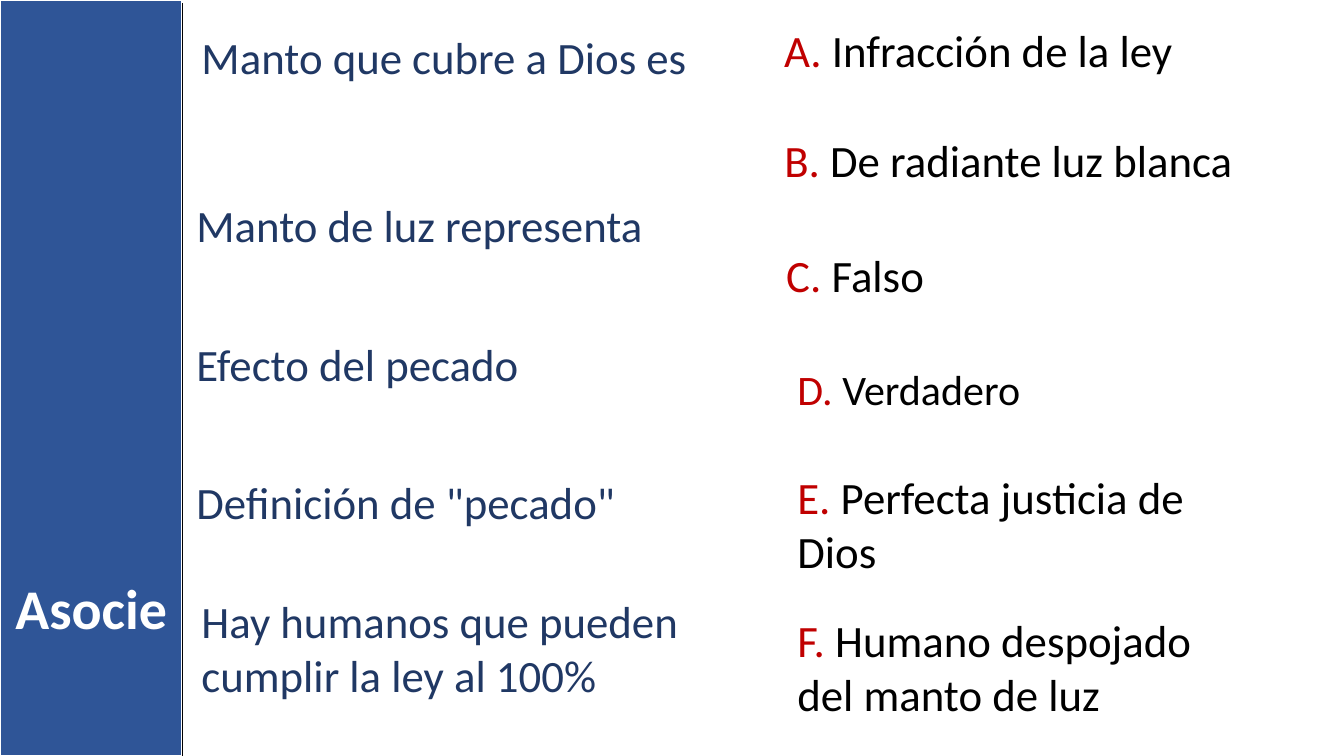
from lxml import etree
from pptx import Presentation
from pptx.dml.color import RGBColor
from pptx.enum.shapes import MSO_CONNECTOR, MSO_SHAPE
from pptx.enum.text import MSO_ANCHOR, MSO_AUTO_SIZE, PP_ALIGN
from pptx.oxml.ns import qn
from pptx.util import Inches, Pt

RECT = MSO_SHAPE.RECTANGLE
STRAIGHT = MSO_CONNECTOR.STRAIGHT
TOP = MSO_ANCHOR.TOP
NO_FIT = MSO_AUTO_SIZE.NONE
CENTER = PP_ALIGN.CENTER

FONT = "Calibri"
COLORS = {
    "bar": "2F5597",
    "prompt": "203864",
    "letter": "C00000",
    "answer": "000000",
    "divider": "000000",
    "white": "FFFFFF",
}
SLIDE_W, SLIDE_H = 13.33, 7.5
BAR_W = 1.81

# Text, offset from the column's left edge, top, width, height
PROMPTS = [
    ("Manto que cubre a Dios es", 0.05, 0.25, 5.39, 0.64),
    ("Manto de luz representa", 0, 1.91, 5.16, 0.64),
    ("Efecto del pecado", 0, 3.29, 5.1, 0.64),
    ("Definición de \"pecado\"", 0, 4.66, 4.94, 0.64),
    ("Hay humanos que pueden cumplir la ley al 100%", 0.05, 5.84, 5.16, 1.18),
]
# Text, offset from the column's left edge, top, width, height, size
ANSWERS = [
    ("Infracción de la ley", 0, 0.18, 5, 0.64, 32),
    ("De radiante luz blanca", 0, 1.27, 4.68, 0.64, 32),
    ("Falso", 0.02, 2.41, 4.73, 0.64, 32),
    ("Verdadero", 0.13, 3.56, 4.75, 0.61, 30),
    ("Perfecta justicia de Dios", 0.13, 4.61, 4.91, 1.18, 32),
    ("Humano despojado del manto de luz", 0.13, 6.03, 4.62, 1.18, 32),
]


def rgb(name):
    return RGBColor.from_string(COLORS[name])


def format_run(r, size, color, bold=False):
    r.font.name = FONT
    r.font.size = Pt(size)
    r.font.bold = bold
    r.font.color.rgb = rgb(color)


def add_text(s, left, top, width, height, parts, size):
    """Add a wrapped text box; parts is a list of (text, color name)."""
    box = s.shapes.add_textbox(*map(Inches, (left, top, width, height)))
    tf = box.text_frame
    tf.word_wrap = True
    p = tf.paragraphs[0]
    for text, color in parts:
        r = p.add_run()
        r.text = text
        format_run(r, size, color)


def add_sidebar(s, left, top, width, height):
    bar = s.shapes.add_shape(RECT, *map(Inches, (left, top, width, height)))
    bar.shadow.inherit = False
    bar.fill.solid()
    bar.fill.fore_color.rgb = rgb("bar")
    bar.line.color.rgb = rgb("white")
    bar.line.width = Pt(1.5)

    title = s.shapes.title
    title.left, title.top = Inches(left), Inches(top + 5.64)
    title.width, title.height = Inches(width), Inches(0.77)
    tf = title.text_frame
    tf.text = "Asocie"
    tf.word_wrap = True
    tf.auto_size = NO_FIT
    tf.vertical_anchor = TOP
    p = tf.paragraphs[0]
    p.alignment = CENTER
    format_run(p.runs[0], 40, "white", bold=True)
    bar._element.addnext(title._element)  # title in front of the bar

    right = Inches(left + width)
    divider = s.shapes.add_connector(
        STRAIGHT, right, Inches(top + 0.03), right, Inches(top + height))
    divider.line.color.rgb = rgb("divider")
    divider.line.width = Pt(1)
    etree.SubElement(divider._element.spPr, qn("a:effectLst"))


def add_prompts(s, left):
    for text, dx, top, width, height in PROMPTS:
        add_text(s, left + dx, top, width, height, [(text, "prompt")], 32)


def add_answers(s, left):
    for letter, (text, dx, top, width, height, size) in zip("ABCDEF", ANSWERS):
        parts = [(f"{letter}. ", "letter"), (text, "answer")]
        add_text(s, left + dx, top, width, height, parts, size)


def main():
    prs = Presentation()
    prs.slide_width, prs.slide_height = Inches(SLIDE_W), Inches(SLIDE_H)
    s = prs.slides.add_slide(prs.slide_layouts[5])
    add_sidebar(s, 0, 0, BAR_W, SLIDE_H)
    add_prompts(s, 1.85)
    add_answers(s, 7.68)
    prs.save("out.pptx")


if __name__ == "__main__":
    main()
